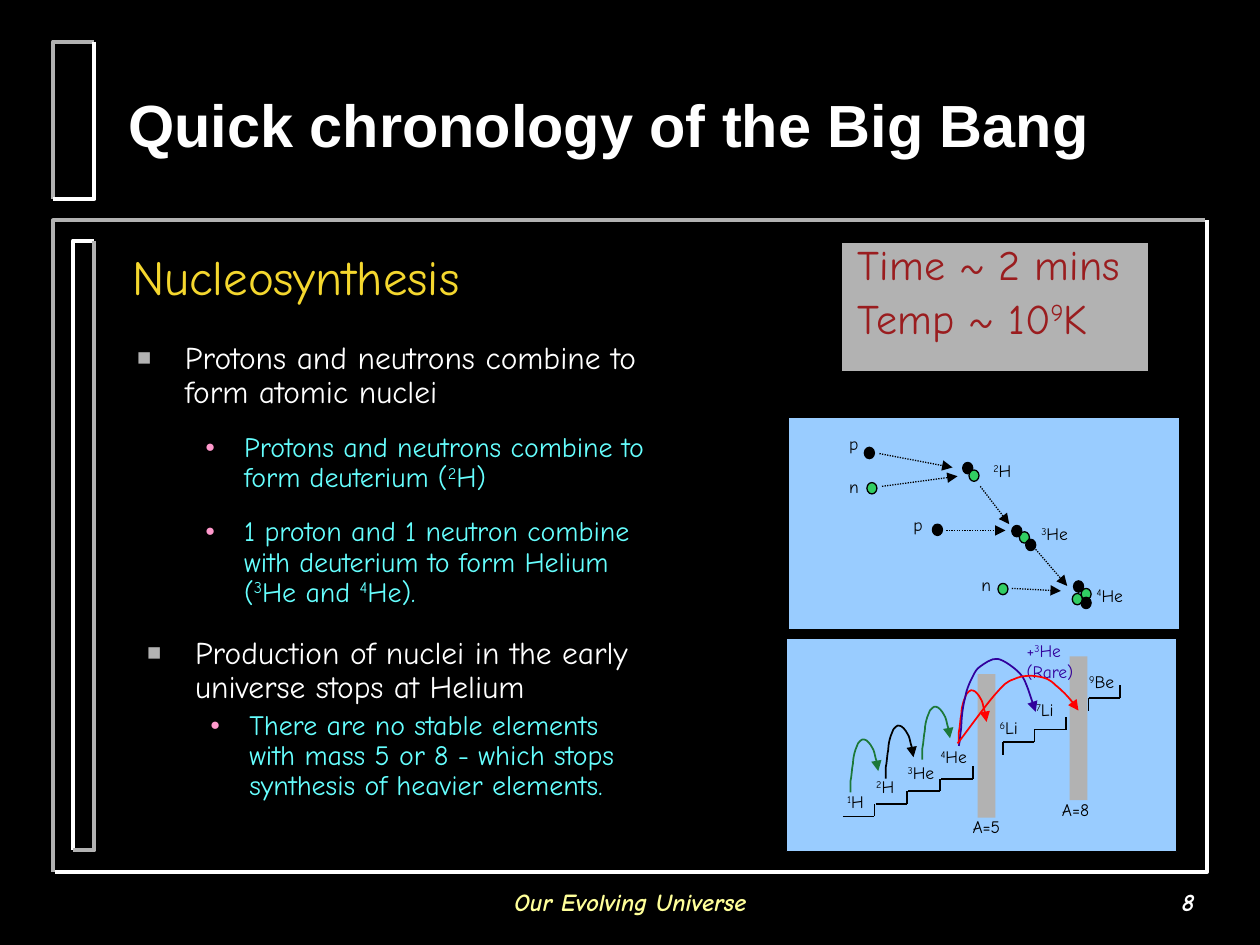
from dataclasses import dataclass
from typing import NamedTuple

from lxml import etree
from pptx import Presentation
from pptx import util as u
from pptx.dml.color import RGBColor
from pptx.enum import dml, shapes, text
from pptx.oxml.ns import qn


@dataclass(frozen=True)
class Theme:
    font: str = "Comic Neue"
    title_font: str = "Arial"
    black: str = "000000"
    white: str = "FFFFFF"
    grey: str = "B2B2B2"
    sky: str = "99CCFF"
    cyan: str = "66FFFF"
    pink: str = "FF99CC"
    yellow: str = "F4D72E"
    cream: str = "FFFF99"
    maroon: str = "9A1D1F"
    neutron: str = "31CE63"
    green: str = "1C7839"
    red: str = "FF0000"
    violet: str = "31009C"
    title: int = 34
    heading: int = 28
    callout: int = 24
    body: int = 18
    sub: int = 16
    footer: int = 14
    label: int = 10


T = Theme()


class Bullet(NamedTuple):
    char: str
    color: str
    percent: int


class Para(NamedTuple):
    text: str
    size: int
    color: str
    margin: float = 0
    hang: float = 0
    bullet: Bullet | None = None


class Label(NamedTuple):
    text: str
    x: float
    y: float
    w: float


class Stair(NamedTuple):
    x: float
    y: float
    steps: int
    pitch: float
    first_riser: bool


class Curve(NamedTuple):
    points: list[tuple[float, float]]
    color: str


SQUARE = Bullet("■", T.grey, 75)
DOT = Bullet("●", T.pink, 60)
HOP = [(0, 0), (0, -0.02), (0, -0.05), (0, -0.09), (0.01, -0.13), (0.01, -0.19),
       (0.02, -0.23), (0.02, -0.27), (0.03, -0.31), (0.04, -0.34), (0.05, -0.37),
       (0.05, -0.37), (0.06, -0.39), (0.07, -0.4), (0.09, -0.43), (0.11, -0.42),
       (0.13, -0.42), (0.16, -0.38), (0.17, -0.36), (0.19, -0.33), (0.19, -0.31),
       (0.2, -0.27), (0.21, -0.24), (0.22, -0.18), (0.22, -0.17)]
RARE = Curve([(7.61, 5.92), (7.62, 5.88), (7.62, 5.83), (7.63, 5.77), (7.63, 5.71),
              (7.64, 5.61), (7.66, 5.54), (7.67, 5.47), (7.7, 5.41), (7.72, 5.37),
              (7.74, 5.33), (7.75, 5.31), (7.78, 5.29), (7.81, 5.27), (7.87, 5.22),
              (7.92, 5.23), (7.97, 5.24), (8.05, 5.3), (8.09, 5.34), (8.13, 5.38),
              (8.14, 5.42), (8.16, 5.47), (8.18, 5.53), (8.21, 5.62), (8.22, 5.65)], T.violet)
LONG = Curve([(7.6, 5.9), (7.65, 5.84), (7.82, 5.6), (7.9, 5.51), (7.97, 5.43), (7.99, 5.41),
              (8.05, 5.39), (8.11, 5.36), (8.19, 5.36), (8.24, 5.37), (8.3, 5.38),
              (8.33, 5.39), (8.38, 5.44), (8.43, 5.48), (8.51, 5.56), (8.56, 5.64)], T.red)


def inch(value: float) -> u.Length:
    return u.Cm(value * 2.54)


def rgb(color: str) -> RGBColor:
    return RGBColor.from_string(color)


def main_point(words: str) -> Para:
    return Para(words, T.body, T.white, 0.38, -0.38, SQUARE)


def sub_point(words: str) -> Para:
    return Para(words, T.sub, T.cyan, 0.81, -0.31, DOT)


def add_bullet(pPr, bullet: Bullet) -> None:
    clr = etree.SubElement(pPr, qn("a:buClr"))
    etree.SubElement(clr, qn("a:srgbClr"), val=bullet.color)
    etree.SubElement(pPr, qn("a:buSzPct"), val=str(bullet.percent * 1000))
    etree.SubElement(pPr, qn("a:buFont"), typeface=T.title_font)
    etree.SubElement(pPr, qn("a:buChar"), char=bullet.char)


def add_text(s, paras: list[Para], x: float, y: float, w: float, h: float, *,
             font: str = T.font, bold: bool = False, italic: bool = False,
             align=None, middle: bool = False, wrap: bool = True,
             grow: bool = False, spaced: bool = False) -> None:
    tf = s.shapes.add_textbox(inch(x), inch(y), inch(w), inch(h)).text_frame
    tf.word_wrap = wrap
    tf.vertical_anchor = text.MSO_ANCHOR.MIDDLE if middle else text.MSO_ANCHOR.TOP
    if grow:
        tf.auto_size = text.MSO_AUTO_SIZE.SHAPE_TO_FIT_TEXT
    for i, para in enumerate(paras):
        p = tf.add_paragraph() if i else tf.paragraphs[0]
        p.alignment = align
        if spaced:
            p.line_spacing = 0.9
            p.space_before = u.Pt(0.2 * para.size)
        pPr = p._p.get_or_add_pPr()
        pPr.set("marL", str(inch(para.margin)))
        pPr.set("indent", str(inch(para.hang)))
        if para.bullet:
            add_bullet(pPr, para.bullet)
        for n, piece in enumerate(para.text.split("^")):
            r = p.add_run()
            r.text = piece
            r.font.name, r.font.size = font, u.Pt(para.size)
            r.font.bold, r.font.italic = bold, italic
            r.font.color.rgb = rgb(para.color)
            if n % 2:
                r._r.get_or_add_rPr().set("baseline", "30000")


def add_label(s, label: Label) -> None:
    add_text(s, [Para(label.text, T.label, T.black)], label.x, label.y, label.w, 0.3,
             wrap=False, grow=True)


def add_solid(s, kind, x: float, y: float, w: float, h: float, fill: str,
              outlined: bool = True) -> None:
    sp = s.shapes.add_shape(kind, inch(x), inch(y), inch(w), inch(h))
    sp.shadow.inherit = False
    sp.fill.solid()
    sp.fill.fore_color.rgb = rgb(fill)
    if outlined:
        sp.line.color.rgb, sp.line.width = rgb(T.black), u.Pt(0.75)
    else:
        sp.line.fill.background()


def add_arrowhead(line) -> None:
    etree.SubElement(line._get_or_add_ln(), qn("a:tailEnd"), type="triangle")


def add_line(s, x1: float, y1: float, x2: float, y2: float, dotted: bool = False) -> None:
    c = s.shapes.add_connector(shapes.MSO_CONNECTOR.STRAIGHT,
                               inch(x1), inch(y1), inch(x2), inch(y2))
    c.line.color.rgb, c.line.width = rgb(T.black), u.Pt(0.75 if dotted else 1)
    if dotted:
        c.line.dash_style = dml.MSO_LINE.ROUND_DOT
        add_arrowhead(c.line)
    etree.SubElement(c._element.spPr, qn("a:effectLst"))


def add_path(s, points: list[tuple[float, float]], color: str, width: float):
    pts = [(inch(x), inch(y)) for x, y in points]
    fb = s.shapes.build_freeform(*pts[0])
    fb.add_line_segments(pts[1:], close=False)
    sp = fb.convert_to_shape()
    sp.shadow.inherit = False
    sp.fill.background()
    sp.line.color.rgb, sp.line.width = rgb(color), u.Pt(width)
    return sp


def add_curve(s, curve: Curve) -> None:
    sp = add_path(s, curve.points, curve.color, 1)
    add_arrowhead(sp.line)
    outline = next(sp._element.iter(qn("a:path")))
    segments = outline.findall(qn("a:lnTo"))
    for i in range(0, len(segments), 3):
        bezier = etree.SubElement(outline, qn("a:cubicBezTo"))
        for segment in segments[i:i + 3]:
            bezier.append(segment[0])
            outline.remove(segment)


def add_stair(s, stair: Stair) -> None:
    tread, rise = 0.25, 0.1
    if stair.first_riser:
        add_line(s, stair.x, stair.y + rise, stair.x, stair.y)
    for i in range(stair.steps):
        x, y = stair.x + i * stair.pitch, stair.y - i * rise
        add_line(s, x, y, x + tread, y)
        add_line(s, x + tread, y, x + tread, y - rise)


def add_frame(s) -> None:
    for x1, y1, x2, y2, upper, lower, shift in (
            (0.42, 1.75, 9.56, 6.92, T.grey, T.white, 0.02),
            (0.58, 1.91, 0.75, 6.75, T.white, T.grey, 0),
            (0.42, 0.33, 0.75, 1.58, T.grey, T.white, 0)):
        add_path(s, [(x2, y1), (x1, y1), (x1, y2)], upper, 2.25)
        add_path(s, [(x2 + shift, y1), (x2 + shift, y2), (x1 + shift, y2)], lower, 2.25)


def add_fusion_panel(s) -> None:
    add_solid(s, shapes.MSO_SHAPE.RECTANGLE, 6.26, 3.31, 3.1, 1.69, T.sky)
    for label in (Label("p", 6.64, 3.39, 0.27), Label("n", 6.64, 3.73, 0.27),
                  Label("p", 7.15, 4.03, 0.27), Label("n", 7.69, 4.51, 0.27),
                  Label(" ^2^H", 7.74, 3.6, 0.41), Label(" ^3^He", 8.12, 4.1, 0.48),
                  Label(" ^4^He", 8.56, 4.59, 0.48)):
        add_label(s, label)
    for ends in ((6.98, 3.6, 7.56, 3.71), (7, 3.86, 7.6, 3.78), (7.78, 3.86, 8.01, 4.16),
                 (7.51, 4.21, 7.98, 4.21), (8.22, 4.36, 8.47, 4.65), (8.03, 4.67, 8.42, 4.69)):
        add_line(s, *ends, dotted=True)
    p, n = T.black, T.neutron
    for x, y, fill in ((6.86, 3.55, p), (6.88, 3.83, n), (7.64, 3.67, p), (7.69, 3.73, n),
                       (7.4, 4.16, p), (8.09, 4.22, n), (8.14, 4.28, p), (8.03, 4.17, p),
                       (7.92, 4.63, n), (8.58, 4.67, n), (8.58, 4.74, p), (8.52, 4.61, p),
                       (8.51, 4.71, n)):
        add_solid(s, shapes.MSO_SHAPE.OVAL, x, y, 0.08, 0.09, fill)


def add_mass_panel(s) -> None:
    add_solid(s, shapes.MSO_SHAPE.RECTANGLE, 6.24, 5.07, 3.1, 1.69, T.sky)
    for stair in (Stair(6.69, 6.48, 4, 0.26, False), Stair(7.96, 5.89, 2, 0.25, True),
                  Stair(8.64, 5.54, 1, 0.25, True)):
        add_stair(s, stair)
    for x, y in ((7.76, 5.35), (8.49, 5.21)):
        add_solid(s, shapes.MSO_SHAPE.RECTANGLE, x, y, 0.14, 1.14, T.grey, outlined=False)
    for label in (Label(" ^1^H", 6.58, 6.23, 0.4), Label(" ^2^H", 6.81, 6.11, 0.41),
                  Label(" ^3^He", 7.06, 6, 0.48), Label(" ^4^He", 7.32, 5.87, 0.48),
                  Label(" ^6^Li", 7.79, 5.64, 0.44), Label(" ^7^Li", 8.08, 5.5, 0.44),
                  Label(" ^9^Be", 8.5, 5.28, 0.45), Label("A=5", 7.62, 6.43, 0.45),
                  Label("A=8", 8.33, 6.29, 0.45)):
        add_label(s, label)
    for x, y, color in ((7.03, 6.18, T.black), (7.32, 6.03, T.green),
                        (6.75, 6.29, T.green), (7.61, 5.9, T.red)):
        add_curve(s, Curve([(x + dx, y + dy) for dx, dy in HOP], color))
    add_curve(s, RARE)
    add_text(s, [Para(t, T.label, T.violet) for t in ("+^3^He", "(Rare)")],
             8.05, 5.03, 0.6, 0.43, wrap=False, grow=True)
    add_curve(s, LONG)


def add_words(s) -> None:
    add_text(s, [Para("Quick chronology of the Big Bang", T.title, T.white)],
             0.92, 0.38, 8.5, 1.21, font=T.title_font, bold=True, middle=True)
    add_text(s, [Para("Nucleosynthesis", T.heading, T.yellow, 0.81, -0.31)],
             0.45, 1.96, 6.4, 0.82, spaced=True)
    for x, y, w, h, paras in (
            (0.99, 2.67, 4.17, 1.19,
             [main_point("Protons and neutrons combine to form atomic nuclei")]),
            (1.03, 3.39, 4.19, 0.92,
             [sub_point("Protons and neutrons combine to form deuterium (^2^H)")]),
            (1.03, 4.06, 4.22, 0.92,
             [sub_point("1 proton and 1 neutron combine with deuterium to form Helium "
                        "(^3^He and ^4^He).")]),
            (1.07, 5.01, 4.19, 0.92,
             [main_point("Production of nuclei in the early universe stops at Helium"),
              sub_point("There are no stable elements with mass 5 or 8 - which stops "
                        "synthesis of heavier elements.")])):
        add_text(s, paras, x, y, w, h, spaced=True)
    add_solid(s, shapes.MSO_SHAPE.RECTANGLE, 6.68, 1.92, 2.44, 1.03, T.grey)
    add_text(s, [Para(t, T.callout, T.maroon, 0.5) for t in ("Time ~ 2 mins", "Temp ~ 10^9^K")],
             6.21, 1.89, 2.85, 1.03, grow=True, spaced=True)
    for words, color, x, w, align in (
            ("Our Evolving Universe", T.cream, 3.42, 3.17, text.PP_ALIGN.CENTER),
            ("8", T.white, 7.5, 2.08, text.PP_ALIGN.RIGHT)):
        add_text(s, [Para(words, T.footer, color)], x, 6.91, w, 0.5,
                 bold=True, italic=True, align=align, middle=True, wrap=False)


def main() -> None:
    prs = Presentation()
    prs.slide_width, prs.slide_height = inch(10), inch(7.5)
    s = prs.slides.add_slide(prs.slide_layouts[6])
    s.background.fill.solid()
    s.background.fill.fore_color.rgb = rgb(T.black)
    add_frame(s)
    add_words(s)
    add_fusion_panel(s)
    add_mass_panel(s)
    prs.save("out.pptx")


if __name__ == "__main__":
    main()
